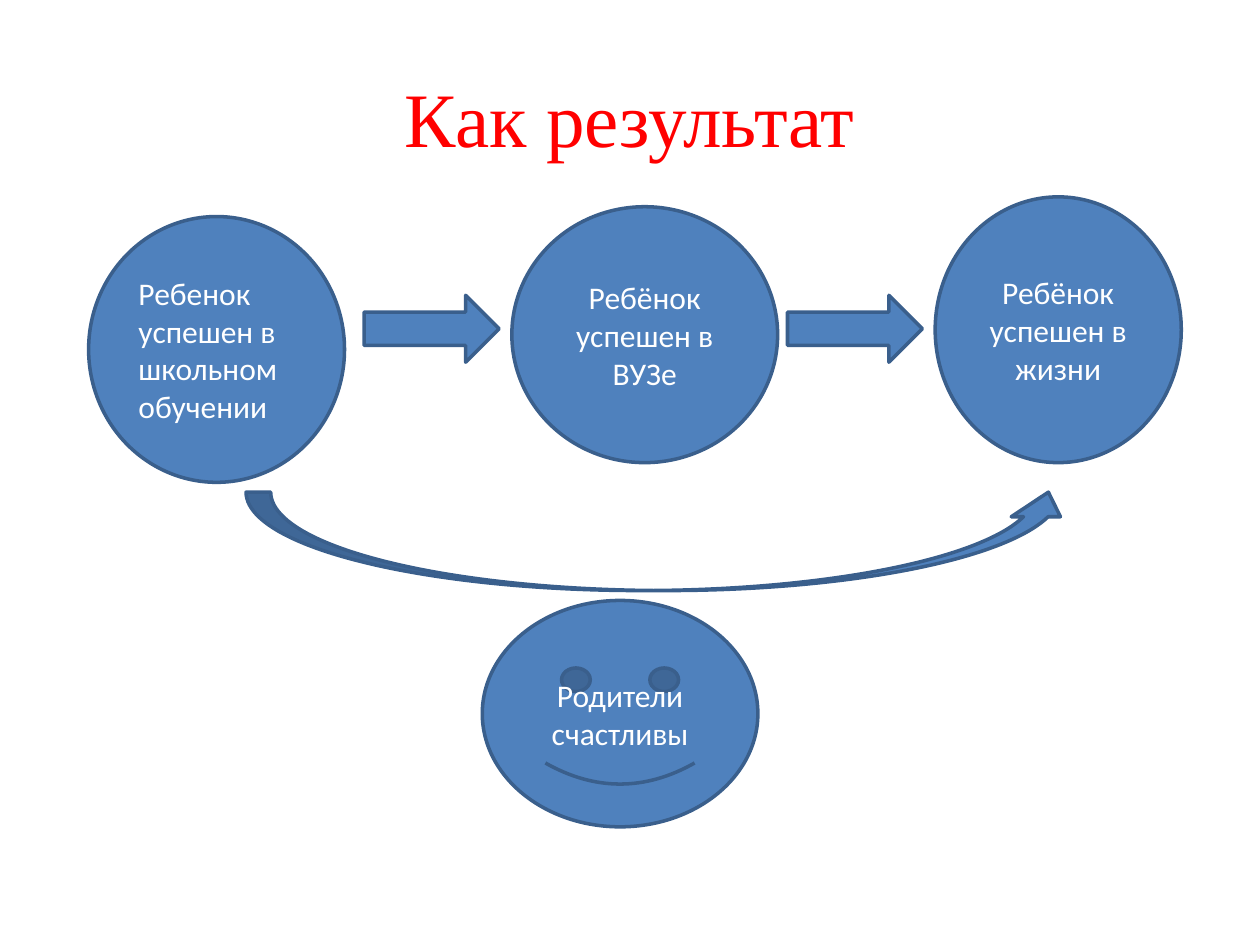
"""Build a slide showing how a child's success leads to happy parents."""
from pptx import Presentation
from pptx.dml.color import RGBColor
from pptx.enum.shapes import MSO_SHAPE as SHAPE
from pptx.enum.text import MSO_ANCHOR as ANCHOR, PP_ALIGN as ALIGN
from pptx.util import Inches, Pt

BLUE = RGBColor(0x4F, 0x81, 0xBD)
OUTLINE = RGBColor(0x3A, 0x5F, 0x8C)
WHITE = RGBColor(0xFF, 0xFF, 0xFF)
RED = RGBColor(0xFF, 0x00, 0x00)

presentation = Presentation()
presentation.slide_width = Inches(10)
presentation.slide_height = Inches(7.5)
COLUMN = presentation.slide_width / 128
ROW = presentation.slide_height / 96


def place(left, top, width, height):
    return int(left * COLUMN), int(top * ROW), int(width * COLUMN), int(height * ROW)


def write(shape, text, size, font, color, alignment=ALIGN.CENTER):
    frame = shape.text_frame
    frame.text = text
    frame.word_wrap = True
    frame.vertical_anchor = ANCHOR.MIDDLE
    paragraph = frame.paragraphs[0]
    paragraph.alignment = alignment
    run_font = paragraph.runs[0].font
    run_font.size = Pt(size)
    run_font.name = font
    run_font.color.rgb = color


slide = presentation.slides.add_slide(presentation.slide_layouts[5])
title = slide.shapes.title
title.left, title.top, title.width, title.height = place(6.4, 3.84, 115.2, 16)
write(title, "Как результат", 44, "Times New Roman", RED)

diagram = [
    (SHAPE.OVAL, (52, 21, 27, 26), "Ребёнок успешен в ВУЗе", ALIGN.CENTER),
    (SHAPE.OVAL, (9, 22, 26, 27), "Ребенок успешен в школьном обучении", ALIGN.LEFT),
    (SHAPE.RIGHT_ARROW, (37, 30, 13.7, 6.8), "", None),
    (SHAPE.RIGHT_ARROW, (80, 30, 13.7, 6.8), "", None),
    (SHAPE.OVAL, (95, 20, 25, 27), "Ребёнок успешен в жизни", ALIGN.CENTER),
    (SHAPE.CURVED_UP_ARROW, (25, 50, 84, 10), "", None),
    (SHAPE.SMILEY_FACE, (49, 61, 28, 23), "Родители счастливы", ALIGN.CENTER),
]
for kind, box, text, alignment in diagram:
    shape = slide.shapes.add_shape(kind, *place(*box))
    shape.shadow.inherit = False
    shape.fill.solid()
    shape.fill.fore_color.rgb = BLUE
    shape.line.color.rgb = OUTLINE
    shape.line.width = Pt(2)
    if text:
        write(shape, text, 18, "Calibri", WHITE, alignment)

presentation.save("out.pptx")
